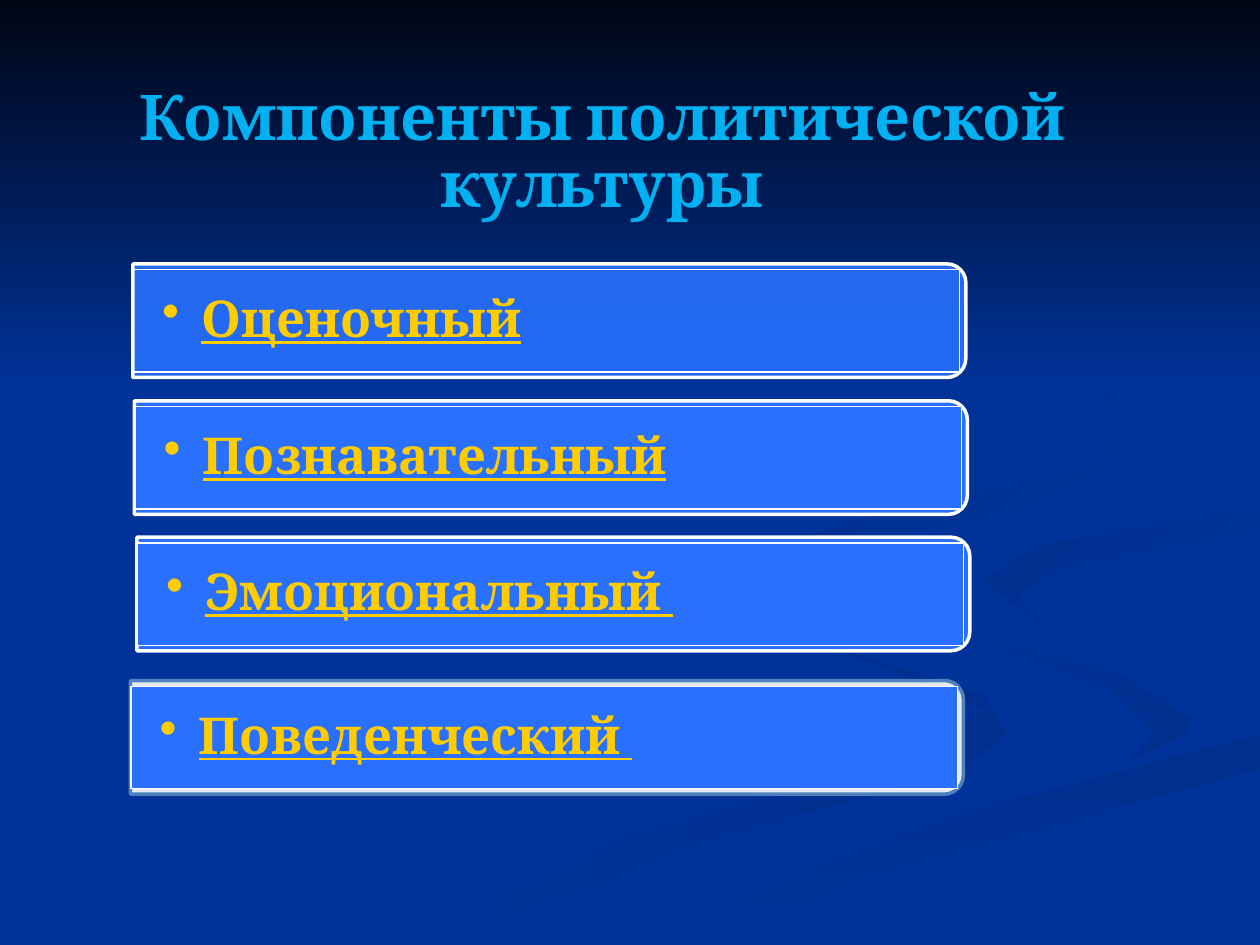
"""Build the slide listing the components of political culture."""
from lxml.etree import SubElement
from pptx import Presentation
from pptx.dml.color import RGBColor
from pptx.enum.shapes import MSO_SHAPE as Shape
from pptx.enum.text import MSO_ANCHOR as Anchor, MSO_AUTO_SIZE as AutoSize, PP_ALIGN as Align
from pptx.oxml.ns import qn
from pptx.util import Cm, Pt

NAVY = RGBColor(0x00, 0x33, 0x99)
NIGHT = RGBColor(0x00, 0x05, 0x14)
SHADE = RGBColor(0x00, 0x2F, 0x8D)
SKY = RGBColor(0x00, 0xB0, 0xF0)
BLUE = RGBColor(0x29, 0x70, 0xFF)
STEEL = RGBColor(0x4F, 0x81, 0xBD)
GOLD = RGBColor(0xFF, 0xCC, 0x00)
WHITE = RGBColor(0xFF, 0xFF, 0xFF)
FONT = "Cambria"

WAVES = [
    (NAVY, SHADE, 0, [
        (19.8, 14), (16.3, 12.9), (14.6, 11.7), (14.9, 12.4), (17.7, 13.4), (19.9, 14.3),
        (18.1, 15.4), (12.7, 16.8), (7.6, 19), (9.2, 19), (14.3, 16.9), (19.2, 15.6),
        (20.3, 14.8)]),
    (NAVY, SHADE, 45, [
        (24, 14.5), (22.6, 13.6), (19.7, 12.8), (18.4, 11.8), (19.2, 12.8), (22.4, 13.9),
        (23.3, 14.8), (22.7, 15.4), (23.9, 14.8)]),
    (SHADE, NAVY, 90, [
        (12.8, 19), (14.5, 19), (17.7, 17.6), (25.4, 15.5), (25.4, 14.8), (19.4, 16.4),
        (15.2, 17.9)]),
    (SHADE, NAVY, 45, [
        (19.8, 11.7), (21, 12.6), (20.5, 12), (21.4, 11.4), (25.4, 10.7), (25.4, 10.2),
        (20.9, 11)]),
    (SHADE, NAVY, 45, [
        (17.4, 10.9), (21, 10.2), (22.6, 9.2), (22.6, 8.2), (21.4, 7), (19.4, 5.9),
        (21.5, 7.1), (22.6, 8.5), (21.9, 9.4), (17.2, 10.5), (14.8, 11.3), (15.8, 12.7),
        (15.1, 11.9), (15.8, 11.3)]),
]

COMPONENTS = [
    ("Оценочный", 2.69, 5.44, None, BLUE, WHITE, 90),
    ("Познавательный", 2.72, 8.2, BLUE, BLUE, WHITE, 100),
    ("Эмоциональный ", 2.77, 10.95, BLUE, BLUE, WHITE, 100),
    ("Поведенческий ", 2.64, 13.84, BLUE, WHITE, STEEL, 90),
]


def paint_gradient(shape, first, last, angle):
    shape.shadow.inherit = False
    shape.line.fill.background()
    shape.fill.gradient()
    shape.fill.gradient_angle = -angle % 360
    for stop, color in zip(shape.fill.gradient_stops, (first, last)):
        stop.color.rgb = color


def paint_solid(shape, color, line_color, line_width):
    shape.shadow.inherit = False
    if color is None:
        shape.fill.background()
    else:
        shape.fill.solid()
        shape.fill.fore_color.rgb = color
    shape.line.color.rgb = line_color
    shape.line.width = Pt(line_width)


presentation = Presentation()
presentation.slide_width, presentation.slide_height = Cm(25.4), Cm(19.05)
slide = presentation.slides.add_slide(presentation.slide_layouts[5])
slide.background.fill.solid()
slide.background.fill.fore_color.rgb = NAVY
shapes = slide.shapes

for first, last, angle, points in WAVES:
    corners = [(Cm(x), Cm(y)) for x, y in points]
    builder = shapes.build_freeform(*corners[0])
    builder.add_line_segments(corners[1:], close=True)
    paint_gradient(builder.convert_to_shape(), first, last, angle)

sky = shapes.add_shape(Shape.RECTANGLE, 0, 0, Cm(25.4), Cm(7.82))
paint_gradient(sky, NIGHT, NAVY, 90)

title = shapes.title
shapes._spTree.append(title._element)
title.left, title.top, title.width, title.height = Cm(0.71), Cm(2.34), Cm(22.86), Cm(3.18)
frame = title.text_frame
frame.text = "Компоненты политической культуры"
frame.auto_size = AutoSize.NONE
frame.vertical_anchor = Anchor.MIDDLE
frame.margin_bottom = Cm(1.79)
paragraph = frame.paragraphs[0]
paragraph.alignment = Align.CENTER
paragraph.line_spacing = 0.89
paragraph.font.name, paragraph.font.size, paragraph.font.bold = FONT, Pt(36), True
paragraph.font.color.rgb = SKY

for name, left, top, label_color, bar_color, line_color, opacity in COMPONENTS:
    bar = shapes.add_shape(Shape.ROUND_2_SAME_RECTANGLE, Cm(left + 7.24), Cm(top - 7.37),
                           Cm(2.29), Cm(16.79))
    bar.rotation = 90
    paint_solid(bar, bar_color, line_color, 2)
    bar_rgb = bar._element.spPr.find(qn("a:solidFill")).find(qn("a:srgbClr"))
    SubElement(bar_rgb, qn("a:alpha"), val=str(opacity * 1000))

    label = shapes.add_shape(Shape.RECTANGLE, Cm(left), Cm(top), Cm(16.66), Cm(2.06))
    paint_solid(label, label_color, WHITE, 0.75)
    frame = label.text_frame
    frame.text = name
    frame.word_wrap = True
    frame.vertical_anchor = Anchor.MIDDLE
    frame.margin_left = Cm(0.58)
    frame.margin_top = frame.margin_right = frame.margin_bottom = Cm(0.05)
    paragraph = frame.paragraphs[0]
    paragraph.alignment = Align.LEFT
    paragraph.line_spacing = 0.9
    properties = paragraph._p.get_or_add_pPr()
    properties.set("marL", str(Cm(0.79)))
    properties.set("indent", str(Cm(-0.79)))
    bullet_color = SubElement(properties, qn("a:buClr"))
    SubElement(bullet_color, qn("a:srgbClr"), val=str(GOLD))
    SubElement(properties, qn("a:buChar"), char="•")
    font = paragraph.font
    font.name, font.size, font.bold, font.underline = FONT, Pt(29), True, True
    font.color.rgb = GOLD

presentation.save("out.pptx")
